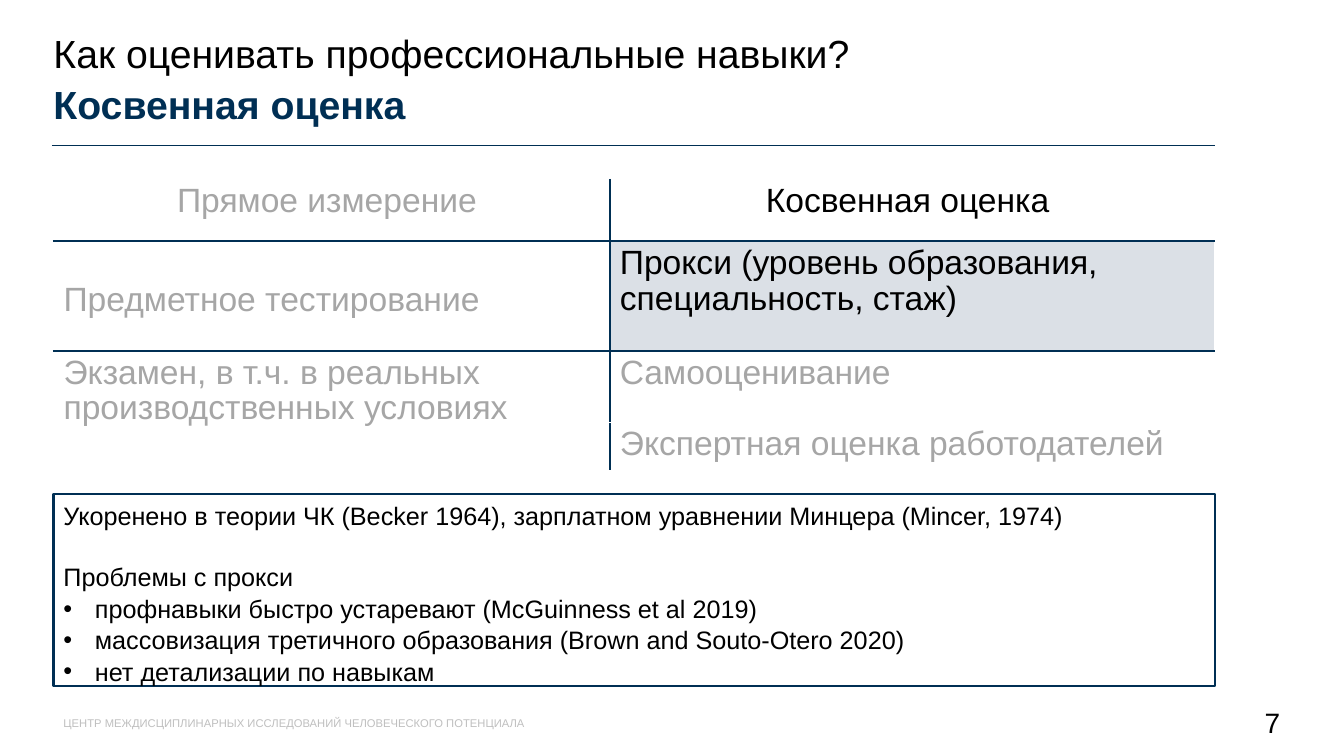
from dataclasses import dataclass

from lxml import etree
from pptx import Presentation
from pptx.dml.color import RGBColor
from pptx.enum import shapes, text
from pptx.oxml import ns
from pptx.util import Pt


@dataclass(frozen=True)
class Theme:
    font: str = "Arial"
    navy: str = "002F54"
    black: str = "000000"
    muted: str = "A6A6A6"
    pale: str = "BFBFBF"
    highlight: str = "DBE0E6"
    title: int = 28
    table: int = 24
    body: int = 18
    number: int = 20
    footer: int = 8


theme = Theme()
LEFT, WIDTH = 38.2, 829.4


def write(p, words, size, color, bold=False, **paragraph_format):
    for name, value in paragraph_format.items():
        setattr(p, name, value)
    r = p.add_run()
    r.text = words
    for name, value in dict(name=theme.font, size=Pt(size), bold=bold).items():
        setattr(r.font, name, value)
    r.font.color.rgb = RGBColor.from_string(color)


def add_border(cell, side):
    """Draw one side of a table cell: L, R, T or B."""
    ln = etree.SubElement(cell._tc.get_or_add_tcPr(), ns.qn(f"a:ln{side}"), w=str(Pt(1.5)))
    fill = etree.SubElement(ln, ns.qn("a:solidFill"))
    etree.SubElement(fill, ns.qn("a:srgbClr"), val=theme.navy)


prs = Presentation()
prs.slide_width, prs.slide_height = Pt(960), Pt(540)
s = prs.slides.add_slide(prs.slide_layouts[5])

# Title and rule
title = s.shapes.title
title.left, title.top, title.width, title.height = Pt(31), Pt(23.8), Pt(840), Pt(69)
tf = title.text_frame
tf.auto_size = text.MSO_AUTO_SIZE.NONE
tf.vertical_anchor = text.MSO_ANCHOR.MIDDLE
heading = dict(line_spacing=0.9, space_before=Pt(0), space_after=Pt(6), alignment=text.PP_ALIGN.LEFT)
write(tf.paragraphs[0], "Как оценивать профессиональные навыки? ", theme.title, theme.black, **heading)
write(tf.add_paragraph(), "Косвенная оценка", theme.title, theme.navy, bold=True, **heading)

rule = s.shapes.add_connector(shapes.MSO_CONNECTOR.STRAIGHT, Pt(37), Pt(104), Pt(867.6), Pt(104))
rule.line.color.rgb = RGBColor.from_string(theme.navy)
rule.line.width = Pt(1)
etree.SubElement(rule._element.spPr, ns.qn("a:effectLst"))

# Footer and slide number
for words, left, width, size, color, align in (
    ("ЦЕНТР МЕЖДИСЦИПЛИНАРНЫХ ИССЛЕДОВАНИЙ ЧЕЛОВЕЧЕСКОГО ПОТЕНЦИАЛА",
     LEFT, 760, theme.footer, theme.pale, text.PP_ALIGN.LEFT),
    ("7", 705.6, 216, theme.number, theme.black, text.PP_ALIGN.RIGHT),
):
    tf = s.shapes.add_textbox(Pt(left), Pt(501.8), Pt(width), Pt(28.8)).text_frame
    tf.word_wrap = True
    tf.vertical_anchor = text.MSO_ANCHOR.MIDDLE
    write(tf.paragraphs[0], words, size, color, alignment=align)

# Table of assessment methods
methods = (
    ("Прямое измерение ", "Косвенная оценка "),
    ("Предметное тестирование ", "Прокси (уровень образования, специальность, стаж) "),
    ("Экзамен, в т.ч. в реальных производственных условиях ", "Самооценивание "),
    (None, "Экспертная оценка работодателей "),
)
row_heights, column_widths = (43.9, 78.5, 51.1, 34.6), (397.4, 432)
table = s.shapes.add_table(4, 2, Pt(LEFT), Pt(128.2), Pt(WIDTH), Pt(sum(row_heights))).table
table.first_row = table.horz_banding = False
for column, width in zip(table.columns, column_widths):
    column.width = Pt(width)
for i, (height, row) in enumerate(zip(row_heights, methods)):
    table.rows[i].height = Pt(height)
    for j, words in enumerate(row):
        cell = table.cell(i, j)
        add_border(cell, "LR"[j == 0])
        if i < 2:
            add_border(cell, "BT"[i])
        active = j == 1 and i < 2
        cell.fill.background()
        if active and i == 1:
            cell.fill.solid()
            cell.fill.fore_color.rgb = RGBColor.from_string(theme.highlight)
        if words:
            write(cell.text_frame.paragraphs[0], words, theme.table,
                  theme.black if active else theme.muted, line_spacing=0.95,
                  alignment=text.PP_ALIGN.LEFT if i else text.PP_ALIGN.CENTER)
table.cell(1, 0).margin_top = Pt(30)
table.cell(2, 0).merge(table.cell(3, 0))

# Notes on proxies
box = s.shapes.add_shape(shapes.MSO_SHAPE.RECTANGLE, Pt(LEFT), Pt(352.8), Pt(WIDTH), Pt(137.5))
box.shadow.inherit = False
box.fill.background()
box.line.color.rgb = RGBColor.from_string(theme.navy)
box.line.width = Pt(1.5)
tf = box.text_frame
tf.word_wrap = True
tf.vertical_anchor = text.MSO_ANCHOR.TOP
for i, (words, gap, bulleted) in enumerate((
    ("Укоренено в теории ЧК (Becker 1964), зарплатном уравнении Минцера (Mincer, 1974)", 21.6, False),
    ("Проблемы с прокси ", 0, False),
    ("профнавыки быстро устаревают (McGuinness et al 2019) ", 0, True),
    ("массовизация третичного образования (Brown and Souto-Otero 2020) ", 0, True),
    ("нет детализации по навыкам", 0, True),
)):
    p = tf.add_paragraph() if i else tf.paragraphs[0]
    write(p, words, theme.body, theme.black, alignment=text.PP_ALIGN.LEFT,
          line_spacing=1.04, space_after=Pt(gap))
    if bulleted:
        pPr = p._p.get_or_add_pPr()
        pPr.set("marL", str(Pt(22.5)))
        pPr.set("indent", str(Pt(-22.5)))
        etree.SubElement(pPr, ns.qn("a:buFont"), typeface=theme.font)
        etree.SubElement(pPr, ns.qn("a:buChar"), char="•")

prs.save("out.pptx")
